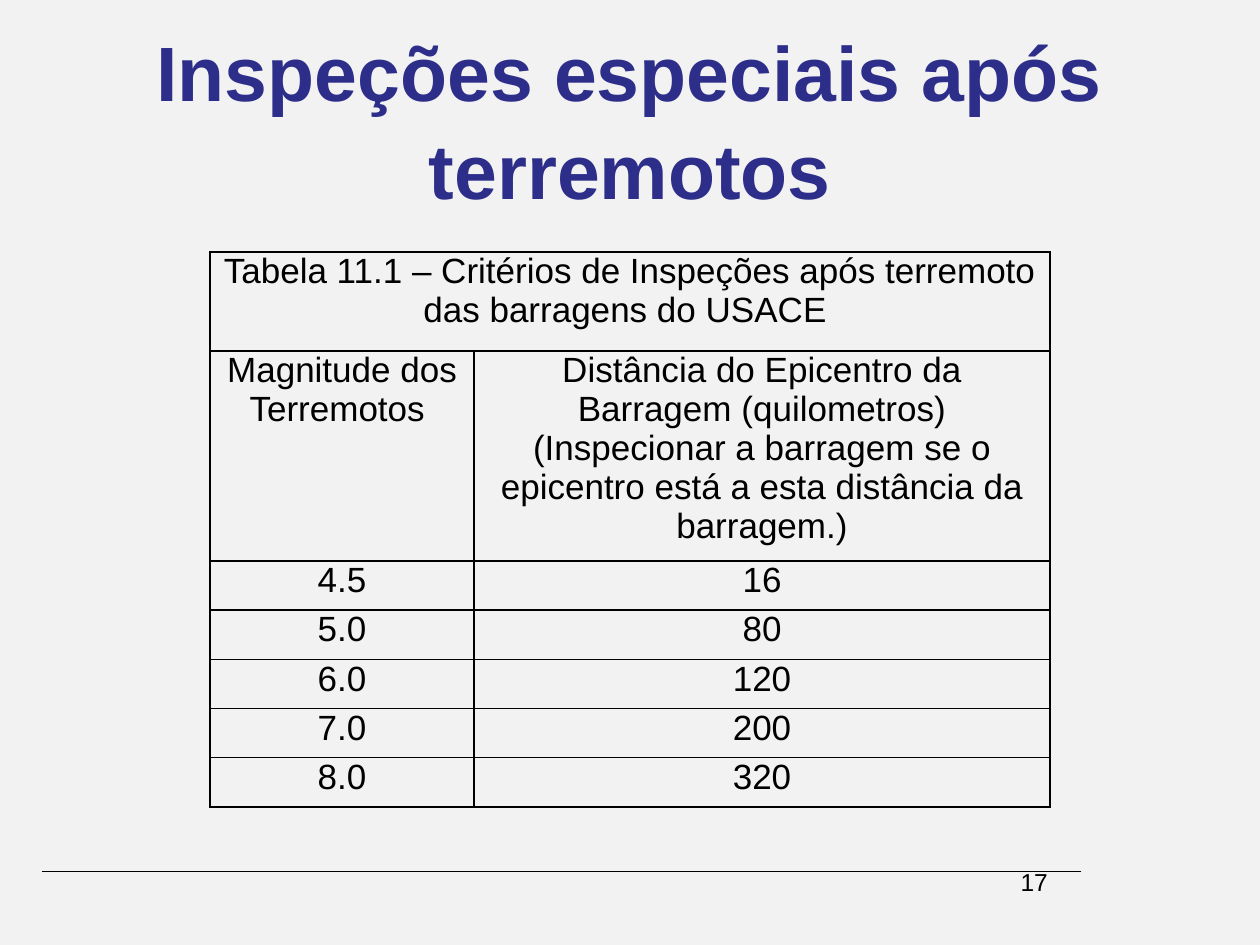
from pptx import Presentation
from pptx.dml.color import RGBColor
from pptx.enum.shapes import MSO_CONNECTOR
from pptx.enum.text import MSO_ANCHOR, PP_ALIGN
from pptx.oxml.ns import qn
from pptx.util import Pt
from lxml.etree import SubElement

COLORS = {"background": "F2F2F2", "title": "2D2D8A", "text": "000000", "line": "000000"}
FONT = "Arial"

CAPTION = "Tabela 11.1 – Critérios de Inspeções após terremoto das barragens do USACE "
HEADERS = [
    ["Magnitude dos Terremotos "],
    [
        "Distância do Epicentro da Barragem (quilometros)",
        "(Inspecionar a barragem se o epicentro está a esta distância da barragem.)",
    ],
]
DISTANCES = [("4.5", "16"), ("5.0", "80"), ("6.0", "120"), ("7.0", "200"), ("8.0", "320")]


def color(name):
    return RGBColor.from_string(COLORS[name])


def write(text_frame, lines, size, color_name="text", bold=False):
    text_frame.word_wrap = True
    for index, line in enumerate(lines):
        paragraph = text_frame.add_paragraph() if index else text_frame.paragraphs[0]
        paragraph.alignment = PP_ALIGN.CENTER
        run = paragraph.add_run()
        run.text = line
        run.font.name = FONT
        run.font.size = Pt(size)
        run.font.bold = bold
        run.font.color.rgb = color(color_name)


def add_title(slide, left, top, width, height):
    title = slide.shapes.title
    title.left, title.top, title.width, title.height = map(Pt, (left, top, width, height))
    text_frame = title.text_frame
    write(text_frame, ["Inspeções especiais após terremotos"], 44, "title", True)
    text_frame.vertical_anchor = MSO_ANCHOR.MIDDLE
    text_frame.paragraphs[0].line_spacing = 1.07


def add_borders(cell):
    properties = cell._tc.get_or_add_tcPr()
    for side in ("a:lnL", "a:lnR", "a:lnT", "a:lnB"):
        border = SubElement(properties, qn(side), w=str(Pt(1)))
        fill = SubElement(border, qn("a:solidFill"))
        SubElement(fill, qn("a:srgbClr"), val=COLORS["line"])


def add_criteria_table(slide, left, top, width, height):
    rows = [[[CAPTION], []], HEADERS]
    rows += [[[magnitude], [distance]] for magnitude, distance in DISTANCES]
    frame = slide.shapes.add_table(len(rows), 2, Pt(left), Pt(top), Pt(width), Pt(height))
    table = frame.table
    table.first_row = False
    table.horz_banding = False

    first_width = 151
    table.columns[0].width = Pt(first_width)
    table.columns[1].width = Pt(width - first_width)
    caption_height, value_height = 56.5, 28.1
    header_height = height - caption_height - value_height * len(DISTANCES)
    heights = [caption_height, header_height] + [value_height] * len(DISTANCES)

    for row_index, row in enumerate(rows):
        table.rows[row_index].height = Pt(heights[row_index])
        for column_index, lines in enumerate(row):
            cell = table.cell(row_index, column_index)
            cell.margin_left = cell.margin_right = Pt(5)
            cell.margin_top = cell.margin_bottom = Pt(0)
            add_borders(cell)
            cell.fill.background()
            write(cell.text_frame, lines, 20)
    table.cell(0, 0).merge(table.cell(0, 1))


def add_footer(slide, left, top, width, height):
    right = left + width
    line_top = top + 6
    line = slide.shapes.add_connector(
        MSO_CONNECTOR.STRAIGHT, Pt(right - 48), Pt(line_top), Pt(left), Pt(line_top)
    )
    line.line.color.rgb = color("line")
    line.line.width = Pt(0.75)
    SubElement(line._element.spPr, qn("a:effectLst"))

    number_width = 150
    number = slide.shapes.add_textbox(
        Pt(right - number_width), Pt(top), Pt(number_width), Pt(height)
    )
    write(number.text_frame, ["17"], 14)


def main():
    presentation = Presentation()
    presentation.slide_width = Pt(720)
    presentation.slide_height = Pt(540)
    slide = presentation.slides.add_slide(presentation.slide_layouts[5])
    slide.background.fill.solid()
    slide.background.fill.fore_color.rgb = color("background")

    add_footer(slide, 24, 492, 642, 36)
    add_title(slide, 36, 21.6, 648, 90)
    add_criteria_table(slide, 120, 144, 480, 308.5)
    presentation.save("out.pptx")


if __name__ == "__main__":
    main()
